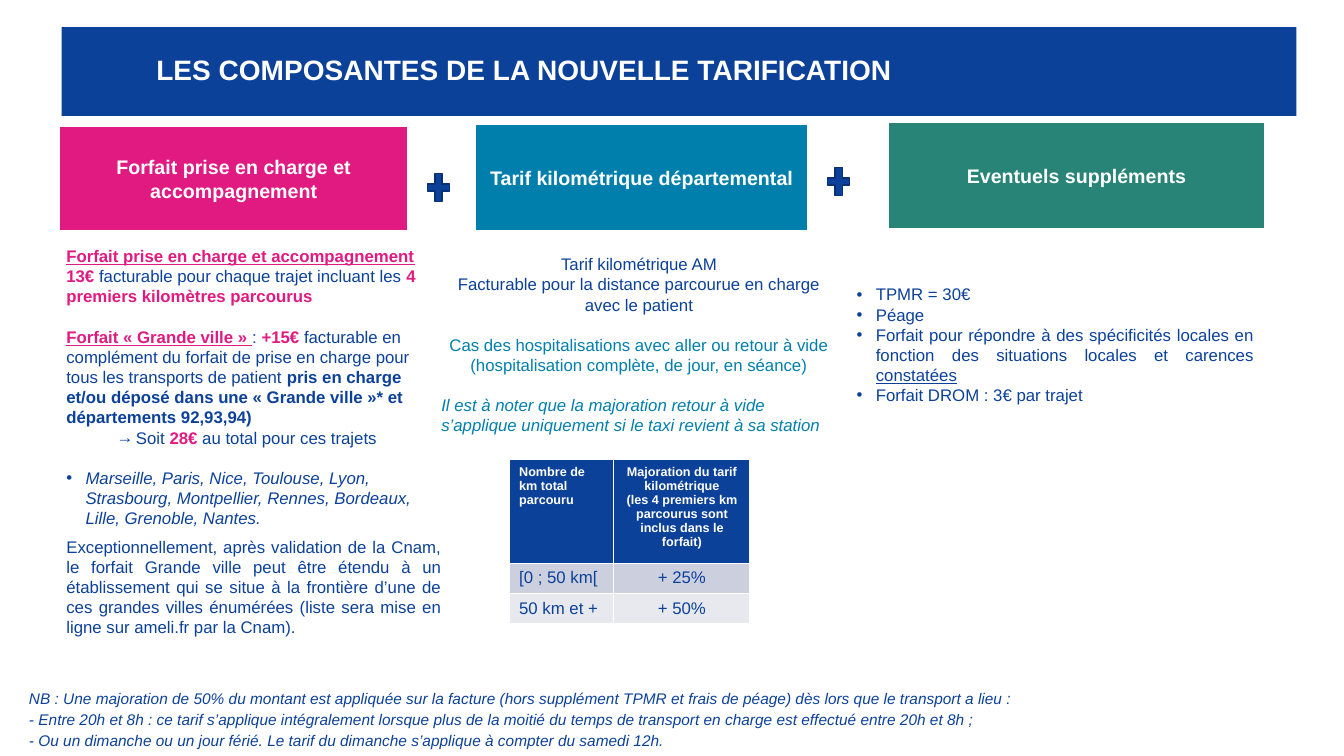
from pptx import Presentation
from pptx.dml.color import RGBColor
from pptx.enum.shapes import MSO_SHAPE
from pptx.enum.text import MSO_ANCHOR, PP_ALIGN
from pptx.oxml.ns import qn
from pptx.util import Inches, Pt
from lxml import etree

RECT, PLUS = MSO_SHAPE.RECTANGLE, MSO_SHAPE.MATH_PLUS
LEFT, CENTER, JUSTIFY = PP_ALIGN.LEFT, PP_ALIGN.CENTER, PP_ALIGN.JUSTIFY
TOP, MIDDLE = MSO_ANCHOR.TOP, MSO_ANCHOR.MIDDLE

THEME = {
    "font": "Arial",
    "blue": "0C419A", "navy": "093072", "pink": "E11A81", "cyan": "007FAD",
    "green": "298478", "white": "FFFFFF", "band": "CCCFDE", "pale": "E7E9EF",
    "title": 20, "head": 14, "body": 12, "note": 11, "cell": 9,
}

prs = Presentation()
prs.slide_width, prs.slide_height = Inches(13.33), Inches(7.5)
W, H = prs.slide_width, prs.slide_height
s = prs.slides.add_slide(prs.slide_layouts[5])


def share(left, top, width, height):
    """Turn percentages of the slide into lengths."""
    return [round(v * full / 100) for v, full in
            ((left, W), (top, H), (width, W), (height, H))]


def write(tf, paragraphs, size="body", color="blue", anchor=TOP, **base):
    """Fill a frame with (runs, paragraph format) pairs; a run is (text, font format)."""
    tf.word_wrap, tf.vertical_anchor = True, anchor
    for i, (runs, fmt) in enumerate(paragraphs):
        p = tf.paragraphs[0] if i == 0 else tf.add_paragraph()
        fmt = dict(fmt)
        bullet, indent = fmt.pop("bullet", None), fmt.pop("indent", 0.19)
        if bullet:
            pPr = p._p.get_or_add_pPr()
            pPr.set("marL", str(Inches(indent)))
            pPr.set("indent", str(-Inches(0.19)))
            etree.SubElement(pPr, qn("a:buFont")).set("typeface", THEME["font"])
            etree.SubElement(pPr, qn("a:buChar")).set("char", bullet)
        for name, value in fmt.items():
            setattr(p, name, value)
        for text, style in runs:
            r = p.add_run()
            r.text = text
            look = {"name": THEME["font"], "size": Pt(THEME[size]), **base, **style}
            r.font.color.rgb = RGBColor.from_string(THEME[look.pop("color", color)])
            for name, value in look.items():
                setattr(r.font, name, value)


# Title band
title = s.shapes.title
title.left, title.top, title.width, title.height = share(4.58, 3.6, 91.88, 11.73)
title.fill.solid()
title.fill.fore_color.rgb = RGBColor.from_string(THEME["blue"])
tf = title.text_frame
tf.margin_left = Inches(0.94)
tf.margin_top = tf.margin_right = tf.margin_bottom = Inches(0.08)
write(tf, [([("LES COMPOSANTES DE LA NOUVELLE TARIFICATION", {})],
            {"alignment": LEFT, "line_spacing": 0.9})],
      "title", "white", MIDDLE, bold=True)

# Column headers and the plus signs between them
for kind, place, fill, line, weight, text in (
    (RECT, (4.42, 16.67, 25.95, 13.87), "pink", "white", 1.5,
     "Forfait prise en charge et accompagnement"),
    (PLUS, (31.5, 22.27, 2.25, 5.07), "blue", "navy", 1, ""),
    (RECT, (35.33, 16.4, 24.83, 14.13), "cyan", "white", 1.5,
     "Tarif kilométrique départemental"),
    (PLUS, (61.28, 21.47, 2.25, 5.07), "blue", "navy", 1, ""),
    (RECT, (66.08, 16.13, 28.05, 14.13), "green", "white", 1.5,
     "Eventuels suppléments"),
):
    sp = s.shapes.add_shape(kind, *share(*place))
    sp.shadow.inherit = False
    sp.fill.solid()
    sp.fill.fore_color.rgb = RGBColor.from_string(THEME[fill])
    sp.line.color.rgb = RGBColor.from_string(THEME[line])
    sp.line.width = Pt(weight)
    if text:
        write(sp.text_frame, [([(text, {})], {"alignment": CENTER})],
              "head", "white", MIDDLE, bold=True)

# Texts under the headers and closing note
PINK = {"color": "pink", "bold": True}
PINK_LINE = {**PINK, "underline": True}
ITALIC = {"italic": True}
GAP = {"space_before": Pt(14.4)}
DOT = {"bullet": "•"}
DOT_J = {**DOT, "alignment": JUSTIFY}
MID = {"alignment": CENTER}
NOTE = {"alignment": JUSTIFY, "line_spacing": 1.15}

package_text = [
    ([("Forfait prise en charge et accompagnement ", PINK_LINE),
      ("13€ ", PINK),
      ("facturable pour chaque trajet incluant les ", {}),
      ("4 premiers kilomètres parcourus", PINK)], {}),
    ([("Forfait « Grande ville » ", PINK_LINE),
      (": ", {}),
      ("+15€ ", PINK),
      ("facturable en complément du forfait de prise en charge pour tous les "
       "transports de patient ", {}),
      ("pris en charge et/ou déposé dans une « Grande ville »* et "
       "départements 92,93,94)", {"bold": True})], GAP),
    ([("Soit ", {}), ("28€ ", PINK), ("au total pour ces trajets", {})],
     {"bullet": "→", "indent": 0.69}),
    ([("Marseille, Paris, Nice, Toulouse, Lyon, Strasbourg, Montpellier, Rennes, "
       "Bordeaux, Lille, Grenoble, Nantes.", ITALIC)], {**DOT, **GAP}),
    ([("Exceptionnellement, après validation de la Cnam, le forfait Grande ville "
       "peut être étendu à un établissement qui se situe à la frontière d’une de "
       "ces grandes villes énumérées (liste sera mise en ligne sur ameli.fr par "
       "la Cnam).", {})], {"alignment": JUSTIFY, "space_before": Pt(6)}),
]
distance_text = [
    ([("Tarif kilométrique AM", {})], MID),
    ([("Facturable pour la distance parcourue en charge avec le patient", {})], MID),
    ([("Cas des hospitalisations avec aller ou retour à vide (hospitalisation "
       "complète, de jour, en séance)", {"color": "cyan"})], {**MID, **GAP}),
    ([("Il est à noter que la majoration retour à vide s’applique uniquement si "
       "le taxi revient à sa station", {"color": "cyan", **ITALIC})], GAP),
]
extras_text = [
    ([("TPMR = 30€", {})], DOT_J),
    ([("Péage", {})], DOT_J),
    ([("Forfait pour répondre à des spécificités locales en fonction des "
       "situations locales et carences ", {}),
      ("constatées", {"underline": True})], DOT_J),
    ([("Forfait DROM : 3€ par trajet", {})], DOT_J),
]
note_text = [([(text, ITALIC)], NOTE) for text in (
    "NB : Une majoration de 50% du montant est appliquée sur la facture (hors "
    "supplément TPMR et frais de péage) dès lors que le transport a lieu :",
    "- Entre 20h et 8h : ce tarif s’applique intégralement lorsque plus de la "
    "moitié du temps de transport en charge est effectué entre 20h et 8h ;",
    "- Ou un dimanche ou un jour férié. Le tarif du dimanche s’applique à compter "
    "du samedi 12h.",
)]
for place, paragraphs, size in (
    ((4.2, 31.87, 29.4, 53.6), package_text, "body"),
    ((32.1, 32.93, 30.9, 25.6), distance_text, "body"),
    ((63, 36.93, 31.05, 20.13), extras_text, "body"),
    ((1.42, 90.13, 81.45, 9.87), note_text, "note"),
):
    write(s.shapes.add_textbox(*share(*place)).text_frame, paragraphs, size)

# Surcharge table
rows = (
    (("Nombre de km total parcouru",),
     ("Majoration du tarif kilométrique",
      "(les 4 premiers km parcourus sont inclus dans le forfait)")),
    (("[0 ; 50 km[",), ("+ 25%",)),
    (("50 km et +",), ("+ 50%",)),
)
row_looks = (("blue", "white", "cell", True), ("band", "blue", "body", False),
             ("pale", "blue", "body", False))
table = s.shapes.add_table(3, 2, *share(37.88, 60.8, 17.93, 21.73)).table
for column, width in zip(table.columns, (7.8, 10.13)):
    column.width = round(W * width / 100)
for row, height in zip(table.rows, (13.73, 4, 4)):
    row.height = round(H * height / 100)
for i, (texts, (fill, color, size, bold)) in enumerate(zip(rows, row_looks)):
    for j, lines in enumerate(texts):
        cell = table.cell(i, j)
        cell.fill.solid()
        cell.fill.fore_color.rgb = RGBColor.from_string(THEME[fill])
        write(cell.text_frame,
              [([(line, {})], {"alignment": (LEFT, CENTER)[j]}) for line in lines],
              size, color, bold=bold)

prs.save("out.pptx")
